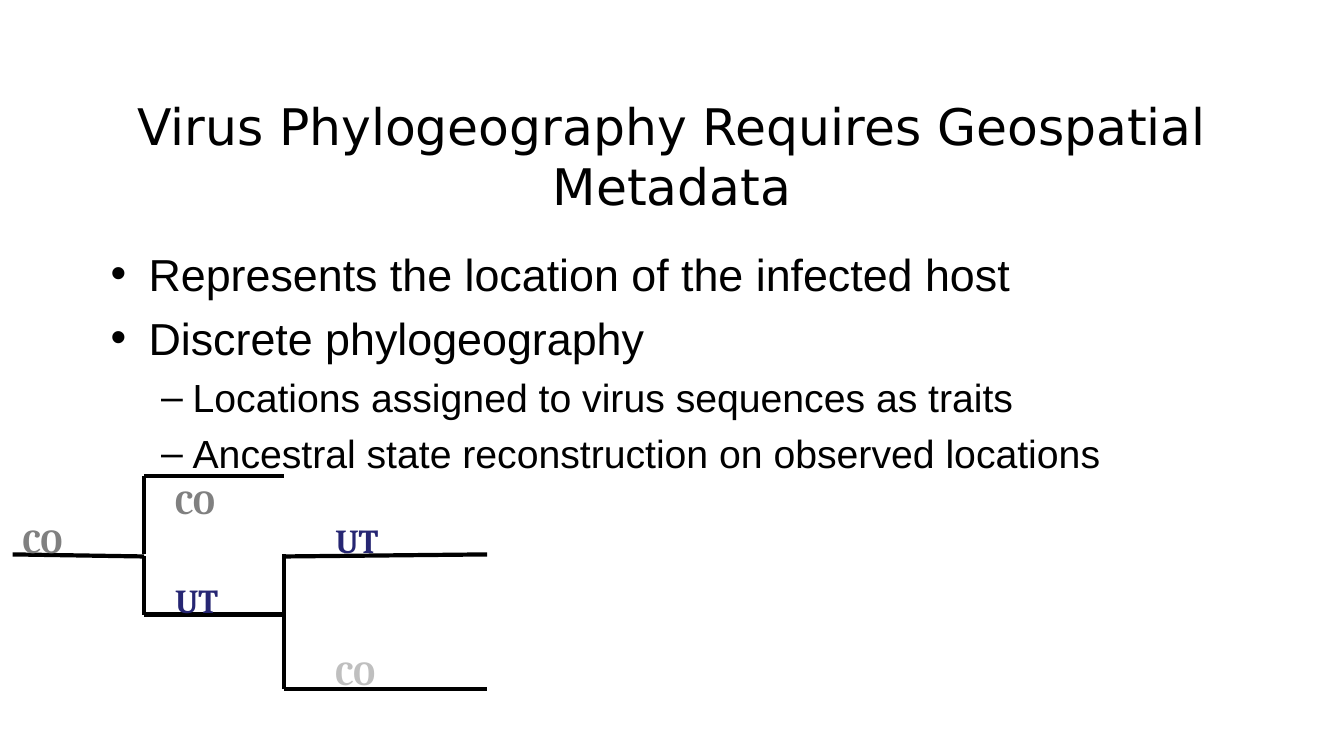
from lxml.etree import SubElement
from pptx import Presentation
from pptx.dml.color import RGBColor
from pptx.enum.shapes import MSO_CONNECTOR
from pptx.enum.text import MSO_ANCHOR, MSO_AUTO_SIZE, PP_ALIGN
from pptx.oxml.ns import qn
from pptx.util import Pt

COLORS = {"black": "000000", "gray": "808080", "silver": "BFBFBF", "navy": "262673"}


def style_font(font, name, size, color, bold=False):
    font.name = name
    font.size = Pt(size)
    font.bold = bold
    font.color.rgb = RGBColor.from_string(COLORS[color])


deck = Presentation()
deck.slide_width, deck.slide_height = Pt(960), Pt(540)
page = deck.slides.add_slide(deck.slide_layouts[5])

# Title
title = page.shapes.title
title.left, title.top, title.width, title.height = Pt(72), Pt(66), Pt(816), Pt(90)
title.text_frame.text = "Virus Phylogeography Requires Geospatial Metadata"
title.text_frame.word_wrap = True
title.text_frame.auto_size = MSO_AUTO_SIZE.NONE
title.text_frame.vertical_anchor = MSO_ANCHOR.MIDDLE
title_para = title.text_frame.paragraphs[0]
title_para.alignment = PP_ALIGN.CENTER
style_font(title_para.runs[0].font, "DejaVu Sans", 36, "black")

# Bulleted points: text and level
points = [
    ("Represents the location of the infected host", 0),
    ("Discrete phylogeography", 0),
    ("Locations assigned to virus sequences as traits", 1),
    ("Ancestral state reconstruction on observed locations", 1),
]
# Per level: bullet, text size, left margin, hanging indent, space before
levels = [("•", 32, 27, 27, 7.4), ("–", 28, 58.5, 22.5, 6.4)]

body = page.shapes.add_textbox(Pt(72), Pt(168), Pt(816), Pt(324))
frame = body.text_frame
frame.word_wrap = True
frame.margin_top = Pt(8)
for index, (text, level) in enumerate(points):
    bullet, size, margin, hanging, space = levels[level]
    para = frame.add_paragraph() if index else frame.paragraphs[0]
    para.text = text
    para.level = level
    if index:
        para.space_before = Pt(space)
    properties = para._p.get_or_add_pPr()
    properties.set("marL", str(Pt(margin)))
    properties.set("indent", str(-Pt(hanging)))
    SubElement(properties, qn("a:buFont"), typeface="Arial")
    SubElement(properties, qn("a:buChar"), char=bullet)
    style_font(para.runs[0].font, "Arial", size, "black")

# Tree branches, from the root to the tips
root_x, first_split_x, second_split_x, tip_x = 9, 103, 203, 348
top_y, upper_y, middle_y, lower_y, bottom_y = 340, 396, 397.5, 439, 492
branches = [
    (root_x, upper_y, first_split_x, middle_y),
    (first_split_x, upper_y, first_split_x, top_y),
    (first_split_x, top_y, second_split_x, top_y),
    (first_split_x, middle_y, first_split_x, lower_y),
    (first_split_x, lower_y, second_split_x, lower_y),
    (second_split_x, lower_y, second_split_x, upper_y),
    (second_split_x, middle_y, tip_x, upper_y),
    (second_split_x, lower_y, second_split_x, bottom_y),
    (second_split_x, bottom_y, tip_x, bottom_y),
]
for branch in branches:
    line = page.shapes.add_connector(MSO_CONNECTOR.STRAIGHT, *map(Pt, branch))
    line.line.width = Pt(3)
    line.line.color.rgb = RGBColor.from_string(COLORS["black"])
    SubElement(line._element.spPr, qn("a:effectLst"))

# Location labels: text, left, top, width, colour
labels = [
    ("CO", 9, 368, 63, "gray"),
    ("CO", 118, 340, 84, "gray"),
    ("UT", 118, 410.5, 54, "navy"),
    ("UT", 232.5, 368, 70, "navy"),
    ("CO", 232.5, 462, 53, "silver"),
]
for text, left, top, width, color in labels:
    label = page.shapes.add_textbox(Pt(left), Pt(top), Pt(width), Pt(36))
    label.text_frame.word_wrap = True
    label.text_frame.auto_size = MSO_AUTO_SIZE.SHAPE_TO_FIT_TEXT
    label.text_frame.text = text
    style_font(label.text_frame.paragraphs[0].runs[0].font, "Cambria", 24, color, bold=True)

deck.save("out.pptx")
